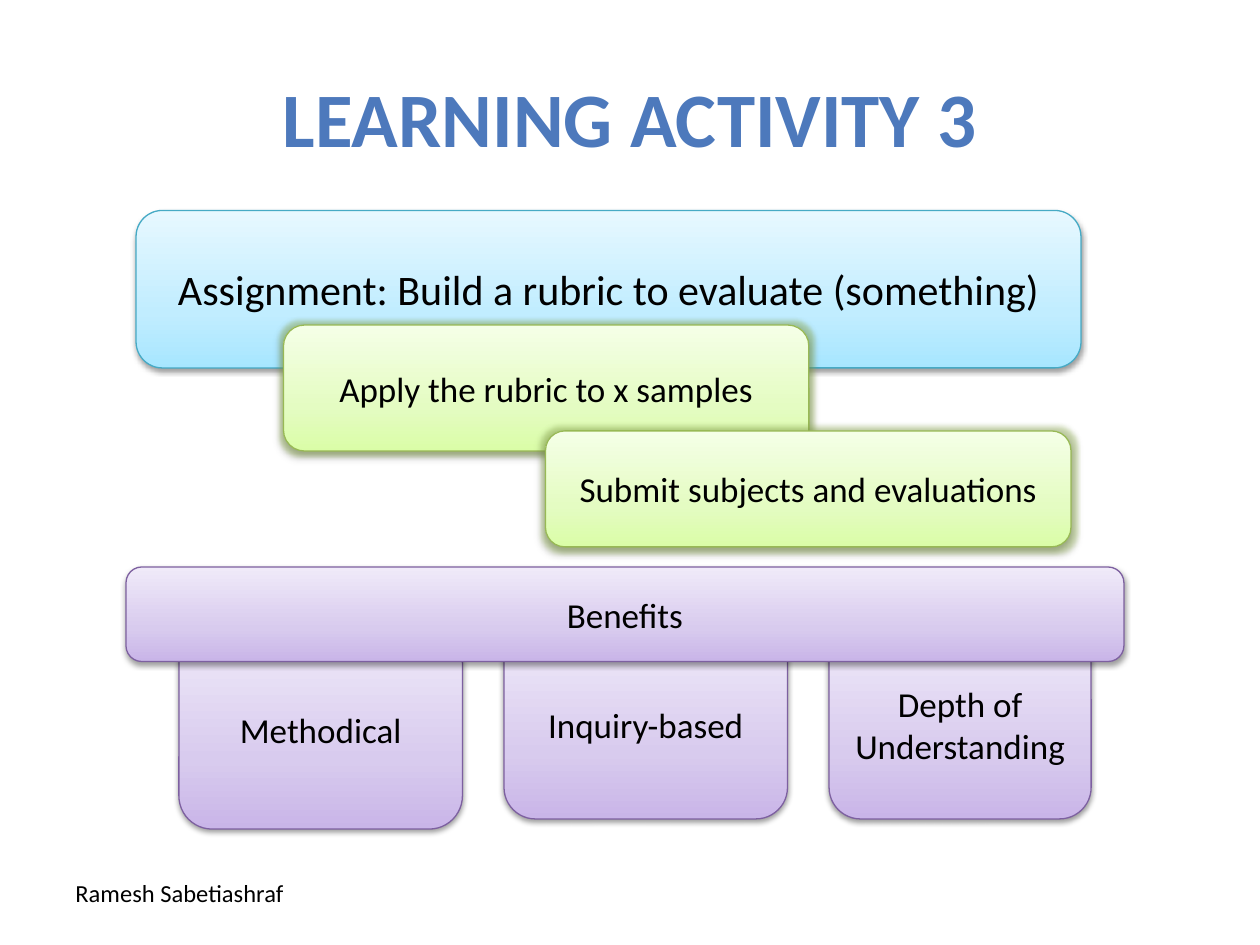
import copy

import pptx
import pptx.dml.color
import pptx.enum.shapes
import pptx.enum.text
import pptx.oxml
import pptx.oxml.ns
import pptx.util
from pptx.util import Inches

RGB = pptx.dml.color.RGBColor
BLACK = RGB(0x00, 0x00, 0x00)
TITLE = RGB(0x4D, 0x79, 0xBC)
GLOW = RGB(0x9B, 0xBB, 0x59)

# Each scheme: outline, then gradient colours from bottom to top
BLUE = (RGB(0x46, 0xAA, 0xC5), RGB(0xA7, 0xE6, 0xFF),
        RGB(0xC1, 0xED, 0xFF), RGB(0xE7, 0xF8, 0xFF))
GREEN = (RGB(0x98, 0xB9, 0x55), RGB(0xDA, 0xFD, 0xA7),
         RGB(0xE4, 0xFC, 0xC2), RGB(0xF5, 0xFF, 0xE7))
PURPLE = (RGB(0x7D, 0x60, 0xA0), RGB(0xC9, 0xB5, 0xE8),
          RGB(0xD8, 0xCB, 0xEE), RGB(0xF0, 0xEA, 0xF9))
STOPS = (0, 0.35, 1)


def place(shape, box):
    shape.left, shape.top, shape.width, shape.height = map(Inches, box)


def write(frame, text, size, color=BLACK, align="CENTER", bold=False):
    frame.text = text
    for par in frame.paragraphs:
        par.alignment = getattr(pptx.enum.text.PP_ALIGN, align)
        par.font.name = "Calibri"
        par.font.size = pptx.util.Pt(size)
        par.font.bold = bold
        par.font.color.rgb = color


def shade(shape, colors):
    """Fill with a three-stop gradient that runs upward."""
    shape.fill.gradient()
    shape.fill.gradient_angle = 90
    stops = shape._element.spPr.find(".//" + pptx.oxml.ns.qn("a:gsLst"))
    stops.append(copy.deepcopy(stops[-1]))
    for stop, color, pos in zip(shape.fill.gradient_stops, colors, STOPS):
        stop.color.rgb = color
        stop.position = pos


def effects(shape, glow):
    """Add a soft drop shadow, and a glow if asked for."""
    halo = (f'<a:glow rad="63500"><a:srgbClr val="{GLOW}">'
            '<a:alpha val="40000"/></a:srgbClr></a:glow>') if glow else ""
    shape._element.spPr.append(pptx.oxml.parse_xml(
        f'<a:effectLst {pptx.oxml.ns.nsdecls("a")}>{halo}'
        '<a:outerShdw blurRad="40000" dist="20000" dir="5400000" '
        'rotWithShape="0"><a:srgbClr val="000000"><a:alpha val="38000"/>'
        '</a:srgbClr></a:outerShdw></a:effectLst>'))


def card(slide, box, text, scheme, size=20):
    shape = slide.shapes.add_shape(
        pptx.enum.shapes.MSO_SHAPE.ROUNDED_RECTANGLE, *map(Inches, box))
    line, *colors = scheme
    shade(shape, colors)
    shape.line.color.rgb = line
    shape.line.width = pptx.util.Pt(0.75)
    effects(shape, scheme is GREEN)
    shape.text_frame.word_wrap = True
    shape.text_frame.vertical_anchor = pptx.enum.text.MSO_ANCHOR.MIDDLE
    write(shape.text_frame, text, size)


def heading(slide, box):
    title = slide.shapes.title
    place(title, box)
    title.text_frame.vertical_anchor = pptx.enum.text.MSO_ANCHOR.MIDDLE
    write(title.text_frame, "LEARNING ACTIVITY 3", 44, TITLE, bold=True)


def footer(slide, box):
    note = slide.shapes.add_textbox(*map(Inches, box))
    note.text_frame.word_wrap = True
    write(note.text_frame, "Ramesh Sabetiashraf", 14, align="LEFT")


def task(slide, box):
    card(slide, box, "Assignment: Build a rubric to evaluate (something)",
         BLUE, 24)


def steps(slide, box):
    """Two overlapping cards, stepping down to the right."""
    left, top, width, height = box
    wide = 4.17
    card(slide, (left, top, wide, 1), "Apply the rubric to x samples", GREEN)
    card(slide, (left + width - wide, top + height - 0.92, wide, 0.92),
         "Submit subjects and evaluations", GREEN)


def benefits(slide, box):
    """Three cards hanging from behind a bar."""
    left, top, width, height = box
    gap, drop = 0.33, 0.5
    x = left + 0.42
    for text, wide, high in (
            ("Methodical", 2.25, height - drop),
            ("Inquiry-based", 2.25, 1.5),
            ("Depth of\nUnderstanding", 2.08, 1.5)):
        card(slide, (x, top + drop, wide, high), text, PURPLE)
        x += wide + gap
    card(slide, (left, top, width, 0.75), "Benefits", PURPLE)


def main():
    deck = pptx.Presentation()
    deck.slide_width, deck.slide_height = Inches(10), Inches(7.5)
    slide = deck.slides.add_slide(deck.slide_layouts[5])
    footer(slide, (0.5, 6.92, 2.75, 0.57))
    heading(slide, (0.5, 0.3, 9, 1.25))
    task(slide, (1.08, 1.67, 7.5, 1.25))
    steps(slide, (2.25, 2.58, 6.25, 1.76))
    benefits(slide, (1, 4.5, 7.92, 2.08))
    deck.save("out.pptx")


if __name__ == "__main__":
    main()
